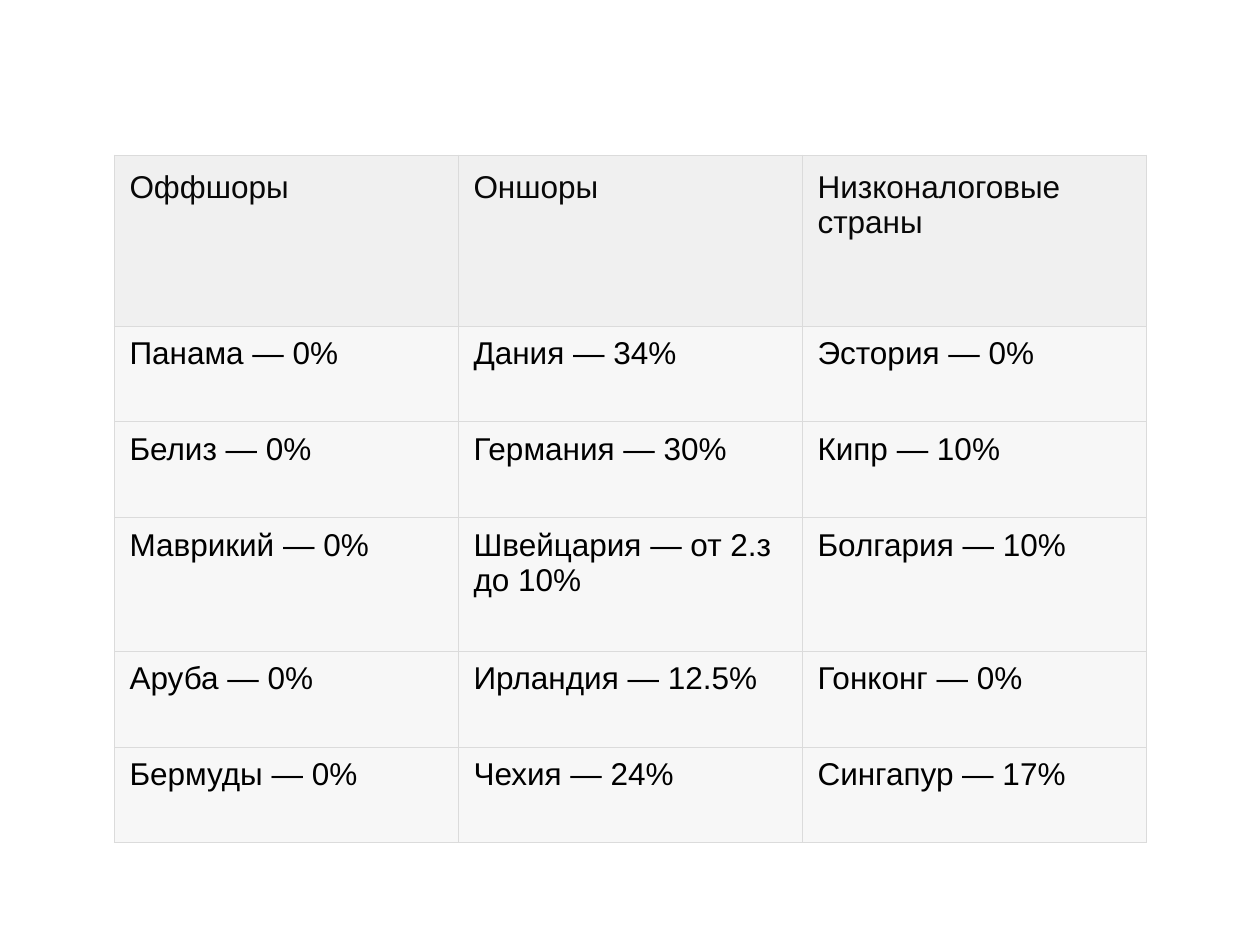
from lxml import etree
from pptx import Presentation
from pptx.dml.color import RGBColor
from pptx.oxml.ns import qn
from pptx.util import Pt

COLORS = {
    "header_fill": "F0F0F0",
    "body_fill": "F7F7F7",
    "border": "DBDBDB",
    "header_text": "080808",
    "body_text": "000000",
}
BLANK_LAYOUT = 6
BORDER_WIDTH = 0.6
SIDE_MARGIN = 8.64
ROW_HEIGHTS = [97.8, 54.7, 54.7, 76.4, 54.7, 54.7]
TAX_RATES = [
    ["Оффшоры", "Оншоры", "Низконалоговые страны"],
    ["Панама — 0%", "Дания — 34%", "Эстория — 0%"],
    ["Белиз — 0%", "Германия — 30%", "Кипр — 10%"],
    ["Маврикий — 0%", "Швейцария — от 2.з до 10%", "Болгария — 10%"],
    ["Аруба — 0%", "Ирландия — 12.5%", "Гонконг — 0%"],
    ["Бермуды — 0%", "Чехия — 24%", "Сингапур — 17%"],
]


def write_text(text_frame, text, *, color, size=18, font="Arial", bold=False):
    run = text_frame.paragraphs[0].add_run()
    run.text = text
    run.font.name = font
    run.font.size = Pt(size)
    run.font.bold = bold
    run.font.color.rgb = RGBColor.from_string(color)


def add_borders(cell, color, width):
    properties = cell._tc.get_or_add_tcPr()
    for side in ("lnL", "lnR", "lnT", "lnB"):
        border = etree.SubElement(properties, qn(f"a:{side}"), w=str(Pt(width)))
        fill = etree.SubElement(border, qn("a:solidFill"))
        etree.SubElement(fill, qn("a:srgbClr"), val=color)


def format_cell(cell, text, part, vertical_margin):
    cell.margin_left = cell.margin_right = Pt(SIDE_MARGIN)
    cell.margin_top = cell.margin_bottom = Pt(vertical_margin)
    add_borders(cell, COLORS["border"], BORDER_WIDTH)
    cell.fill.solid()
    cell.fill.fore_color.rgb = RGBColor.from_string(COLORS[f"{part}_fill"])
    write_text(cell.text_frame, text, color=COLORS[f"{part}_text"])


def add_tax_table(slide, left, top, width, height):
    column_count = len(TAX_RATES[0])
    tax_table = slide.shapes.add_table(
        len(TAX_RATES), column_count, Pt(left), Pt(top), Pt(width), Pt(height)
    ).table
    for column in tax_table.columns:
        column.width = Pt(width / column_count)
    scale = height / sum(ROW_HEIGHTS)
    for row_index, (row_height, rates) in enumerate(zip(ROW_HEIGHTS, TAX_RATES)):
        tax_table.rows[row_index].height = Pt(row_height * scale)
        part, vertical_margin = ("body", 5.76) if row_index else ("header", 8.64)
        for column_index, rate in enumerate(rates):
            cell = tax_table.cell(row_index, column_index)
            format_cell(cell, rate, part, vertical_margin)


def main():
    presentation = Presentation()
    presentation.slide_width = Pt(720)
    presentation.slide_height = Pt(540)
    slide = presentation.slides.add_slide(presentation.slide_layouts[BLANK_LAYOUT])
    add_tax_table(slide, left=65.4, top=88.6, width=589.8, height=393)
    presentation.save("out.pptx")


if __name__ == "__main__":
    main()
